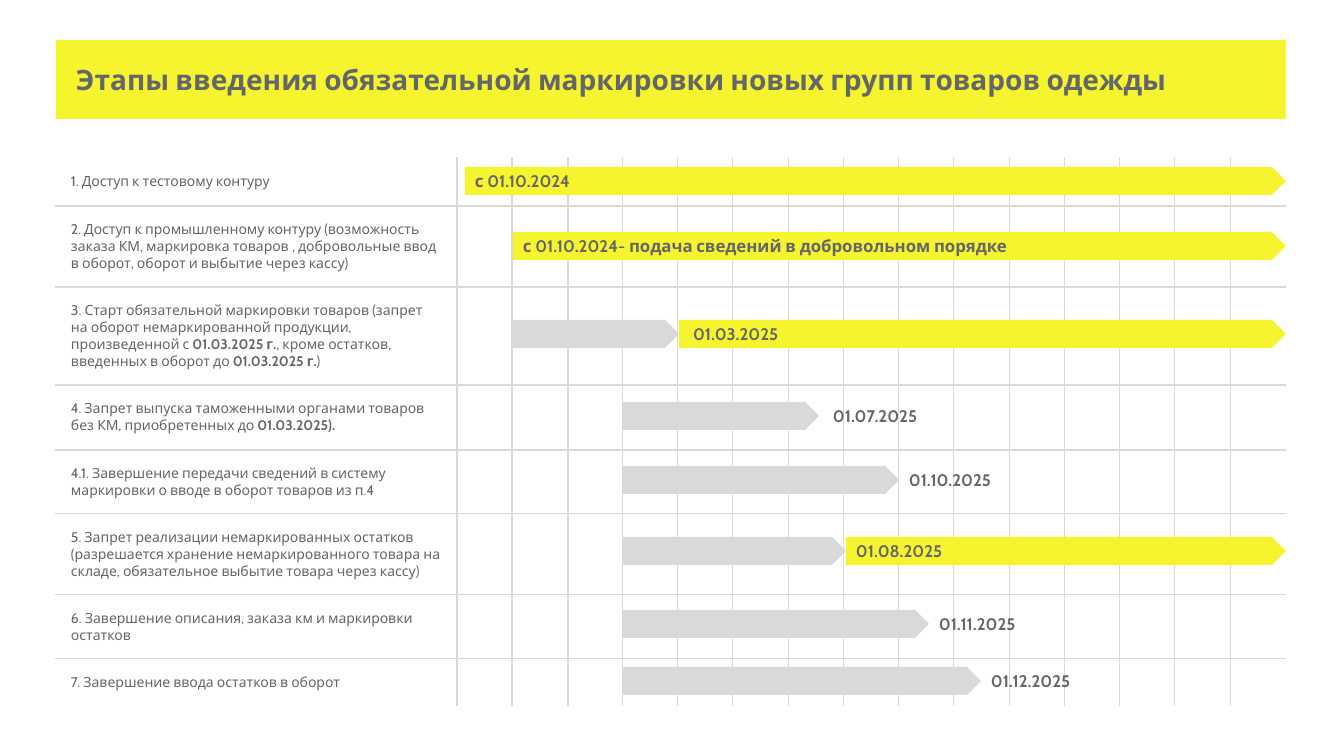
"""Build a one-slide timeline of the mandatory labelling stages for clothing."""
import lxml.etree
import pptx
import pptx.dml.color
import pptx.enum.shapes
import pptx.enum.text
import pptx.oxml
import pptx.oxml.ns
import pptx.util

PX = 914400 / 100.8
THEME = {
    "font": "Cabin", "text": "63666A", "yellow": "F6F42E", "grey": "D9D9D9", "white": "FFFFFF",
    "title": 20, "bar": 12, "stage": 10,
}
LEFT, RIGHT, TABLE_TOP = 56, 1286, 159
MONTHS, MONTHS_LEFT = 15, 457
BAR_HEIGHT = 28

STAGES = [
    (48, "1. Доступ к тестовому контуру"),
    (81, "2. Доступ к промышленному контуру (возможность заказа КМ, маркировка товаров , "
         "добровольные ввод в оборот, оборот и выбытие через кассу)"),
    (98, "3. Старт обязательной маркировки товаров (запрет на оборот немаркированной продукции, "
         "произведенной с **01.03.2025 г.**, кроме остатков, введенных в оборот до **01.03.2025 г.**)"),
    (65, "4. Запрет выпуска таможенными органами товаров без КМ, приобретенных до **01.03.2025).**"),
    (64, "4.1. Завершение передачи сведений в систему маркировки о вводе в оборот товаров из п.4"),
    (81, "5. Запрет реализации немаркированных остатков (разрешается хранение немаркированного "
         "товара на складе, обязательное выбытие товара через кассу)"),
    (64, "6. Завершение описания, заказа км и маркировки остатков"),
    (48, "7. Завершение ввода остатков в оборот"),
]

# top, start of the grey bar, milestone, yellow bar follows, text inset, label
TIMELINE = [
    (167, None, 465, True, 10, "**с 01.10.2024**"),
    (232, None, 513, True, 10, "**с 01.10.2024**- **подача сведений в добровольном порядке**"),
    (320, 513, 679, True, 14, "**01.03.2025**"),
    (402, 623, 819, False, 14, "**01.07.2025**"),
    (466, 623, 899, False, 10, "**01.10.2025**"),
    (537, 623, 846, True, 10, "**01.08.2025**"),
    (610, 623, 929, False, 10, "**01.11.2025**"),
    (667, 623, 981, False, 10, "**01.12.2025**"),
]


def emu(*lengths):
    """Turn px lengths into EMU."""
    return [pptx.util.Emu(round(length * PX)) for length in lengths]


def write(frame, marked, size, inset):
    """Write left-aligned text, bold between double asterisks, with side insets in px."""
    frame.word_wrap = True
    frame.auto_size = pptx.enum.text.MSO_AUTO_SIZE.NONE
    frame.vertical_anchor = pptx.enum.text.MSO_ANCHOR.MIDDLE
    frame.margin_left, frame.margin_right, frame.margin_top, frame.margin_bottom = emu(inset, inset, 0, 0)
    para = frame.paragraphs[0]
    para.alignment = pptx.enum.text.PP_ALIGN.LEFT
    for index, part in enumerate(marked.split("**")):
        if part:
            span = para.add_run()
            span.text = part
            span.font.name = THEME["font"]
            span.font.size = pptx.util.Pt(THEME[size])
            span.font.bold = index % 2 == 1
            span.font.color.rgb = pptx.dml.color.RGBColor.from_string(THEME["text"])


deck = pptx.Presentation()
deck.slide_width, deck.slide_height = emu(1344, 756)
page = deck.slides.add_slide(deck.slide_layouts[5])

title = page.shapes.title
title.left, title.top, title.width, title.height = emu(LEFT, 40, RIGHT - LEFT, 79)
outline = lxml.etree.SubElement(title.element.spPr, pptx.oxml.ns.qn("a:prstGeom"), prst="roundRect")
lxml.etree.SubElement(outline, pptx.oxml.ns.qn("a:avLst"))
title.fill.solid()
title.fill.fore_color.rgb = pptx.dml.color.RGBColor.from_string(THEME["yellow"])
write(title.text_frame, "**Этапы введения обязательной маркировки новых групп товаров одежды**", "title", 20)

table_height = sum(height for height, _ in STAGES)
table = page.shapes.add_table(
    len(STAGES), MONTHS + 1, *emu(LEFT, TABLE_TOP - 1, RIGHT - LEFT, table_height)).table
table.first_row = table.horz_banding = False
edges = [LEFT] + [round(MONTHS_LEFT + (RIGHT - MONTHS_LEFT) * i / MONTHS) for i in range(MONTHS + 1)]
for column, start, end in zip(table.columns, edges, edges[1:]):
    column.width, = emu(end - start)

for row_index, (height, stage) in enumerate(STAGES):
    table.rows[row_index].height, = emu(height)
    for column_index in range(MONTHS + 1):
        cell = table.cell(row_index, column_index)
        outer_sides = {
            "L": column_index == 0, "R": column_index == MONTHS,
            "T": row_index == 0, "B": row_index == len(STAGES) - 1,
        }
        properties = cell._tc.get_or_add_tcPr()
        for side, outer in outer_sides.items():
            color = THEME["white" if outer else "grey"]
            properties.append(pptx.oxml.parse_xml(
                f'<a:ln{side} {pptx.oxml.ns.nsdecls("a")} w="12700"><a:solidFill>'
                f'<a:srgbClr val="{color}"/></a:solidFill></a:ln{side}>'))
        cell.fill.background()
    stage_cell = table.cell(row_index, 0)
    write(stage_cell.text_frame, stage, "stage", 15)
    stage_cell.vertical_anchor = pptx.enum.text.MSO_ANCHOR.MIDDLE
    stage_cell.margin_left, stage_cell.margin_right = emu(15, 15)
    stage_cell.margin_top, stage_cell.margin_bottom = emu(15, 15)

for top, grey_start, milestone, has_yellow, inset, label in TIMELINE:
    bars = []
    if grey_start:
        bars.append((grey_start, milestone, "grey"))
    if has_yellow:
        bars.append((milestone, RIGHT, "yellow"))
    for start, end, color in bars:
        box = page.shapes.add_shape(
            pptx.enum.shapes.MSO_SHAPE.PENTAGON, *emu(start, top, end - start, BAR_HEIGHT))
        box.shadow.inherit = False
        box.fill.solid()
        box.fill.fore_color.rgb = pptx.dml.color.RGBColor.from_string(THEME[color])
        box.line.fill.background()
    if not has_yellow:
        box = page.shapes.add_textbox(*emu(milestone, top, RIGHT - milestone, BAR_HEIGHT))
    write(box.text_frame, label, "bar", inset)

deck.save("out.pptx")
